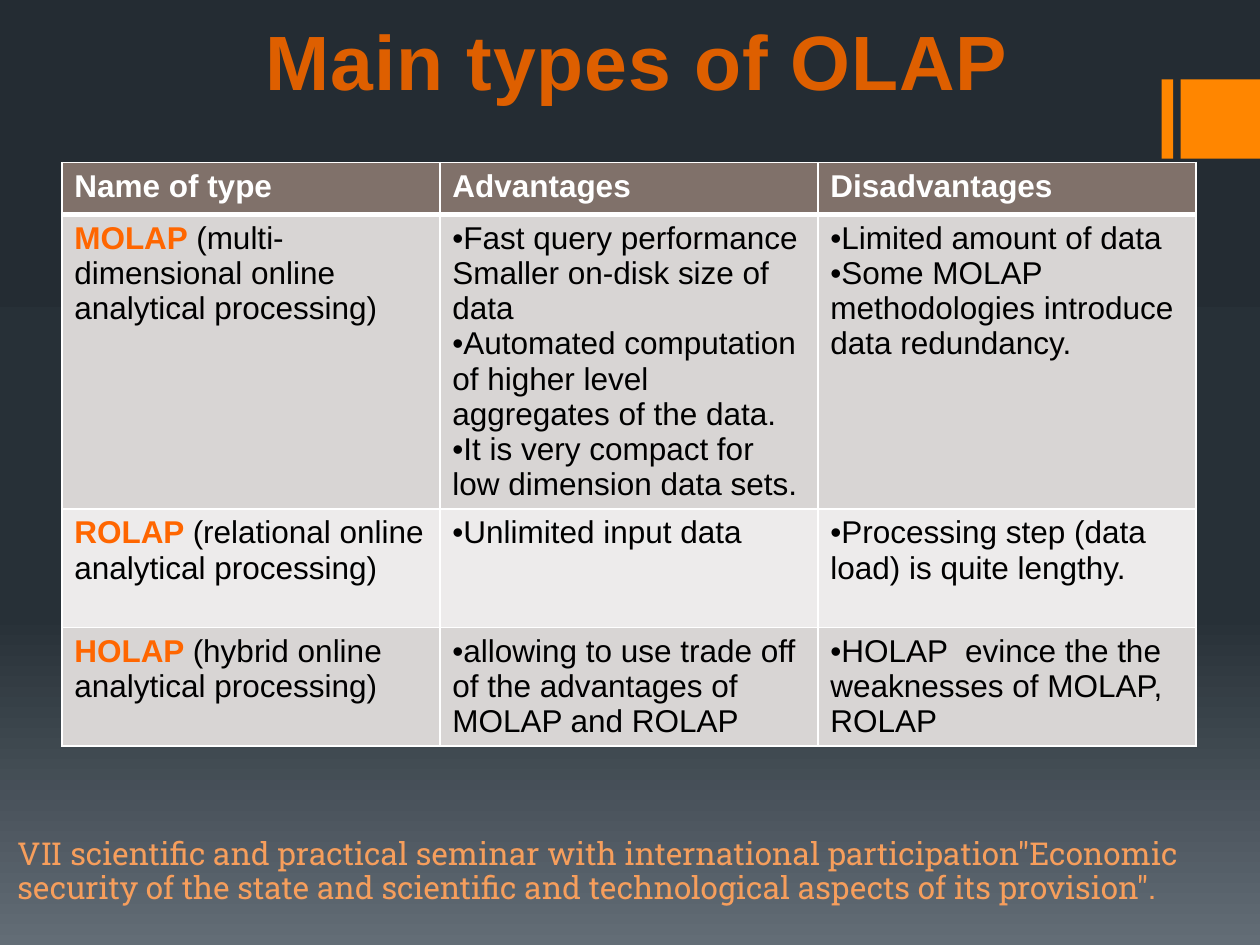
from copy import deepcopy

from lxml import etree
from pptx import Presentation
from pptx.dml.color import RGBColor
from pptx.enum.shapes import MSO_SHAPE
from pptx.enum.text import MSO_ANCHOR, MSO_AUTO_SIZE, PP_ALIGN
from pptx.oxml.ns import qn
from pptx.util import Inches, Pt

RECTANGLE = MSO_SHAPE.RECTANGLE
LEFT = PP_ALIGN.LEFT
TOP, BOTTOM = MSO_ANCHOR.TOP, MSO_ANCHOR.BOTTOM
NO_AUTOFIT = MSO_AUTO_SIZE.NONE
TITLE_ONLY = 5

WIDTH, HEIGHT = 10, 7.5
ORANGE, WHITE = "FF8600", "FFFFFF"
HEADER_FILL, BAND_FILLS = "80716A", ("D8D5D4", "EDEBEB")
BACKGROUND_STOPS = [(0, "242C33"), (0.65, "273037"), (1, "636D76")]
TITLE_STOPS = [(0.25, "DE5F00"), (1, "9D4300")]

TITLE_FORMAT = {"name": "Arial", "size": Pt(44), "bold": True}
HEADER_FORMAT = {"name": "Arial", "size": Pt(18), "bold": True, "color": WHITE}
TYPE_FORMAT = HEADER_FORMAT | {"color": "FF6600"}
BODY_FORMAT = HEADER_FORMAT | {"bold": False, "color": "000000"}
FOOTER_FORMAT = {"name": "Roboto Slab", "size": Pt(18), "color": "F69E5C"}

COLUMN_WIDTH = 3
ROW_HEIGHTS = (0.41, 2.34, 0.94, 0.94)
HEADINGS = ("Name of type", "Advantages", "Disadvantages")
OLAP_TYPES = [
    ("MOLAP", "(multi-dimensional online analytical processing)",
     ["•Fast query performance",
      "Smaller on-disk size of data",
      "•Automated computation of higher level aggregates of the data.",
      "•It is very compact for low dimension data sets."],
     ["•Limited amount of data",
      "•Some MOLAP methodologies introduce data redundancy."]),
    ("ROLAP", "(relational online analytical processing)",
     ["•Unlimited input data"],
     ["•Processing step (data load) is quite lengthy."]),
    ("HOLAP", "(hybrid online analytical processing)",
     ["•allowing to use trade off of the advantages of MOLAP and ROLAP"],
     ["•HOLAP  evince the the weaknesses of MOLAP, ROLAP"]),
]
FOOTER = ('VІI scientific and practical seminar with international participation'
          '"Economic security of the state and scientific and technological '
          'aspects of its provision".')


def rgb(value):
    return RGBColor.from_string(value)


def set_gradient(fill, owner, stops):
    """Fill downwards with the given stops; owner is the element holding the fill."""
    fill.gradient()
    fill.gradient_angle = 270
    stop_list = owner.find(".//" + qn("a:gsLst"))
    while len(stop_list) < len(stops):
        stop_list.append(deepcopy(stop_list[-1]))
    for stop, (position, color) in zip(fill.gradient_stops, stops):
        stop.position = position
        stop.color.rgb = rgb(color)


def add_run(paragraph, text, formats):
    run = paragraph.add_run()
    run.text = text
    for name, value in formats.items():
        if name == "color":
            run.font.color.rgb = rgb(value)
        else:
            setattr(run.font, name, value)
    return run


def add_title(slide, text):
    title = slide.shapes.title
    title.left, title.top = Inches(2.01), Inches(-0.11)
    title.width, title.height = Inches(6.95), Inches(1)
    frame = title.text_frame
    frame.vertical_anchor = BOTTOM
    frame.auto_size = NO_AUTOFIT
    paragraph = frame.paragraphs[0]
    paragraph.alignment = LEFT
    run = add_run(paragraph, text, TITLE_FORMAT)
    set_gradient(run.font.fill, run._r, TITLE_STOPS)
    run._r.get_or_add_rPr().set("spc", "50")


def add_corner_block(slide, left, width):
    side = 0.63
    block = slide.shapes.add_shape(
        RECTANGLE, Inches(left), Inches(side), Inches(width), Inches(side))
    block.shadow.inherit = False
    block.fill.solid()
    block.fill.fore_color.rgb = rgb(ORANGE)
    block.line.fill.background()


def set_borders(cell, widths):
    """Draw white borders; widths maps an edge letter to points."""
    properties = cell._tc.get_or_add_tcPr()
    for index, (edge, width) in enumerate(widths.items()):
        line = etree.Element(qn(f"a:ln{edge}"), w=str(Pt(width)))
        fill = etree.SubElement(line, qn("a:solidFill"))
        etree.SubElement(fill, qn("a:srgbClr"), val=WHITE)
        properties.insert(index, line)


def fill_cell(cell, paragraphs, color, top=1, bottom=1):
    """Write paragraphs, each a list of (text, formats) runs, on a coloured cell."""
    cell.fill.solid()
    cell.fill.fore_color.rgb = rgb(color)
    cell.vertical_anchor = TOP
    set_borders(cell, {"L": 1, "R": 1, "T": top, "B": bottom})
    frame = cell.text_frame
    for index, runs in enumerate(paragraphs):
        paragraph = frame.add_paragraph() if index else frame.paragraphs[0]
        for text, formats in runs:
            add_run(paragraph, text, formats)


def add_olap_table(slide):
    table = slide.shapes.add_table(
        len(ROW_HEIGHTS), len(HEADINGS), Inches(0.49), Inches(1.29),
        Inches(COLUMN_WIDTH * len(HEADINGS)), Inches(sum(ROW_HEIGHTS))).table
    for column in table.columns:
        column.width = Inches(COLUMN_WIDTH)
    for row, height in zip(table.rows, ROW_HEIGHTS):
        row.height = Inches(height)
    for column, heading in enumerate(HEADINGS):
        fill_cell(table.cell(0, column), [[(heading, HEADER_FORMAT)]],
                  HEADER_FILL, bottom=3)
    for row, (name, meaning, *lists) in enumerate(OLAP_TYPES, start=1):
        contents = [[[(f"{name} ", TYPE_FORMAT), (meaning, BODY_FORMAT)]]]
        contents += [[[(item, BODY_FORMAT)] for item in items] for items in lists]
        for column, paragraphs in enumerate(contents):
            fill_cell(table.cell(row, column), paragraphs,
                      BAND_FILLS[(row - 1) % 2], top=3 if row == 1 else 1)


def add_footer(slide, text):
    box = slide.shapes.add_textbox(
        Inches(0.04), Inches(6.6), Inches(WIDTH), Inches(1.01))
    box.text_frame.word_wrap = True
    paragraph = box.text_frame.paragraphs[0]
    paragraph.line_spacing = 0.9
    add_run(paragraph, text, FOOTER_FORMAT)


def main():
    presentation = Presentation()
    presentation.slide_width = Inches(WIDTH)
    presentation.slide_height = Inches(HEIGHT)
    slide = presentation.slides.add_slide(presentation.slide_layouts[TITLE_ONLY])
    set_gradient(slide.background.fill, slide.element, BACKGROUND_STOPS)
    add_corner_block(slide, left=9.22, width=0.09)
    add_corner_block(slide, left=9.37, width=0.63)
    add_title(slide, "Main types of OLAP")
    add_olap_table(slide)
    add_footer(slide, FOOTER)
    presentation.save("out.pptx")


if __name__ == "__main__":
    main()
